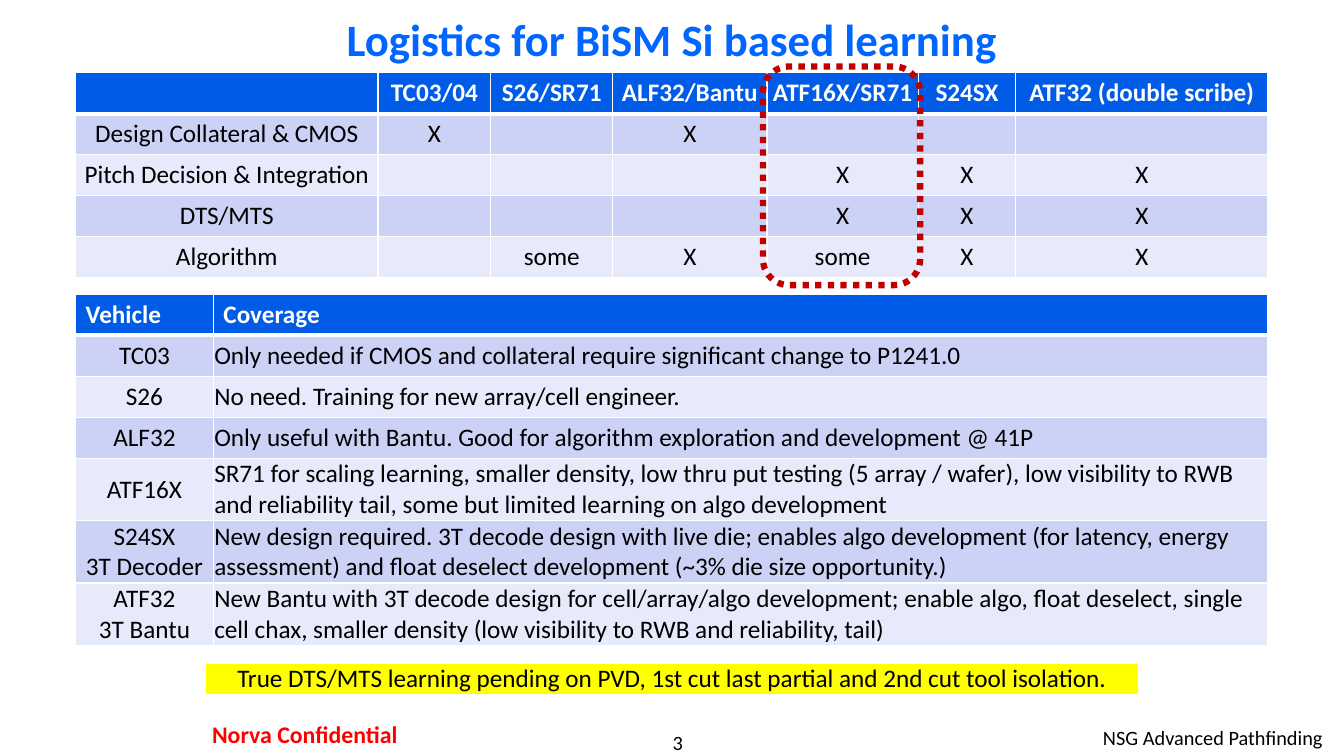
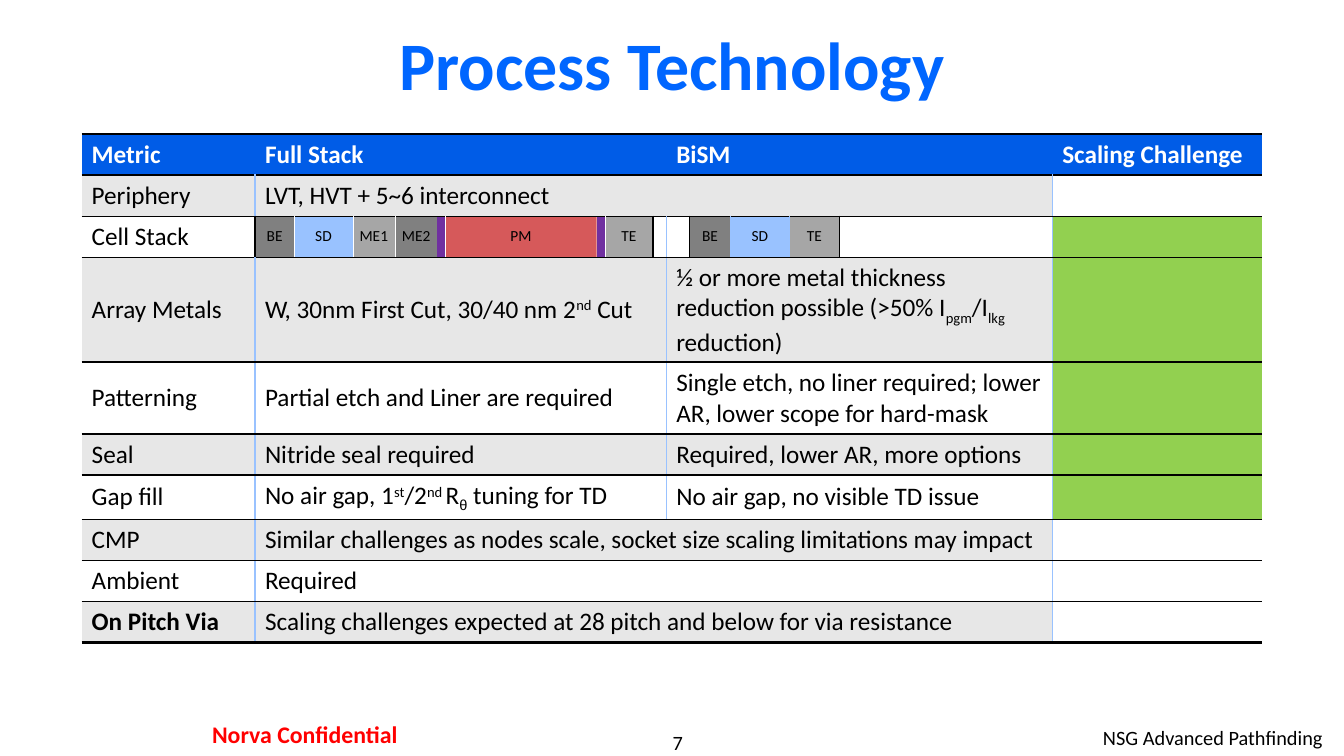
"""Builds two slides on vehicle logistics and process technology."""
from dataclasses import dataclass
from typing import Any

from lxml import etree
from pptx import Presentation
from pptx.dml.color import RGBColor
from pptx.enum.dml import MSO_LINE
from pptx.enum.shapes import MSO_SHAPE
from pptx.enum.text import MSO_ANCHOR, PP_ALIGN
from pptx.oxml.ns import qn
from pptx.util import Pt

LEFT, CENTER, RIGHT = PP_ALIGN.LEFT, PP_ALIGN.CENTER, PP_ALIGN.RIGHT
TOP, MIDDLE = MSO_ANCHOR.TOP, MSO_ANCHOR.MIDDLE
ROUNDED = MSO_SHAPE.ROUNDED_RECTANGLE
DOTTED = MSO_LINE.ROUND_DOT

BLACK, WHITE, RED = "000000", "FFFFFF", "FF0000"
TITLE_BLUE, HEADER_BLUE, PALE_BLUE = "0066FF", "005CE7", "99C2FF"
BANDS = ("CCD2F6", "E7EAFA")
LIGHT_GRAY, MID_GRAY, DARK_GRAY = "E7E7E7", "A6A6A6", "808080"
GREEN, PURPLE, BRICK = "92D050", "7030A0", "C10002"
YELLOW, DARK_RED = "FFFF00", "C00000"

ROW = 29.3
TWO_LINES = 44.6
WIDE = (7.2, 3.6)
TIGHT = (0.7, 0.35)
NONE = (0, 0)


def rgb(value):
    """Turn a hex string into a colour."""
    return RGBColor.from_string(value)


@dataclass
class Entry:
    """One table cell: its paragraphs of runs and its look."""
    text: Any = ""
    fill: Any = None
    span: int = 1
    align: Any = LEFT
    color: str = BLACK
    bold: bool = False
    size: float = 18
    margins: tuple = WIDE
    opacity: int = 100


class Deck:
    """Holds the style, the presentation and the current slide."""

    font = "Calibri"

    def __init__(self):
        """Start an empty widescreen presentation."""
        self.show = Presentation()
        self.show.slide_width, self.show.slide_height = Pt(960), Pt(540)
        self.slide = None

    def add_slide(self, title, title_size, title_height, number):
        """Add a slide with its title and the shared footer."""
        self.slide = self.show.slides.add_slide(self.show.slide_layouts[6])
        self.text(number, (400.3, 521.3, 167.8, 17.3), 14.5, margins=NONE)
        self.text("NSG Advanced Pathfinding", (635.8, 514.8, 316, 25.2), 14.5, align=RIGHT)
        self.text("Norva Confidential", (111.6, 509.8, 212.4, 29.5), 17, RED, True,
                  margins=(8.6, 4.3))
        self.text(title, (72, 12.2, 816, title_height), title_size, TITLE_BLUE, True,
                  anchor=MIDDLE)

    def set_margins(self, target, margins):
        """Set the side and end margins of a frame or cell."""
        target.margin_left = target.margin_right = Pt(margins[0])
        target.margin_top = target.margin_bottom = Pt(margins[1])

    def add_text_run(self, paragraph, text, size, color, bold, baseline=0, font=None):
        """Add one run of text, raised or lowered by a percentage."""
        run = paragraph.add_run()
        run.text = text
        run.font.name, run.font.size, run.font.bold = font or self.font, Pt(size), bold
        run.font.color.rgb = rgb(color)
        if baseline:
            run._r.get_or_add_rPr().set("baseline", str(baseline * 1000))

    def text(self, text, box, size, color=BLACK, bold=False, align=CENTER,
             anchor=TOP, margins=WIDE):
        """Add a text box with one line."""
        frame = self.slide.shapes.add_textbox(*map(Pt, box)).text_frame
        frame.word_wrap = True
        frame.vertical_anchor = anchor
        self.set_margins(frame, margins)
        frame.paragraphs[0].alignment = align
        self.add_text_run(frame.paragraphs[0], text, size, color, bold)

    def border(self, cell, side, line):
        """Draw one cell edge, or clear it when there is no line."""
        color, width = line or (None, 0)
        edge = etree.SubElement(cell._tc.get_or_add_tcPr(), qn(f"a:ln{side}"),
                                w=str(int(Pt(width))))
        if color:
            solid = etree.SubElement(edge, qn("a:solidFill"))
            etree.SubElement(solid, qn("a:srgbClr"), val=color)
        else:
            etree.SubElement(edge, qn("a:noFill"))

    def paint(self, cell, entry):
        """Fill a cell with its colour and opacity."""
        if entry.fill is None:
            cell.fill.background()
            return
        cell.fill.solid()
        cell.fill.fore_color.rgb = rgb(entry.fill)
        if entry.opacity < 100:
            color = cell._tc.tcPr.find(qn("a:solidFill")).find(qn("a:srgbClr"))
            etree.SubElement(color, qn("a:alpha"), val=str(entry.opacity * 1000))

    def cell_text(self, cell, entry):
        """Put the paragraphs of an entry into a cell."""
        cell.vertical_anchor = MIDDLE
        self.set_margins(cell, entry.margins)
        paragraphs = [entry.text] if isinstance(entry.text, str) else entry.text
        for index, runs in enumerate(paragraphs):
            frame = cell.text_frame
            paragraph = frame.add_paragraph() if index else frame.paragraphs[0]
            paragraph.alignment = entry.align
            for text, *shift in [(runs,)] if isinstance(runs, str) else runs:
                if text:
                    self.add_text_run(paragraph, text, entry.size, entry.color, entry.bold,
                                      *shift)

    def table(self, left, top, widths, heights, rows, row_lines, column_lines):
        """Add a table; lines are listed by row edge and, per row, by column edge."""
        frame = self.slide.shapes.add_table(len(heights), len(widths), Pt(left), Pt(top),
                                            Pt(sum(widths)), Pt(sum(heights)))
        table = frame.table
        table.first_row = table.horz_banding = False
        for column, width in zip(table.columns, widths):
            column.width = Pt(width)
        for r, (height, entries) in enumerate(zip(heights, rows)):
            table.rows[r].height = Pt(height)
            start = 0
            for entry in entries:
                end = start + entry.span
                for c in range(start, end):
                    cell = table.cell(r, c)
                    first, last = c == start, c in (start, end - 1)
                    self.border(cell, "L", column_lines[r][start] if first else None)
                    self.border(cell, "R", column_lines[r][end] if last else None)
                    self.border(cell, "T", row_lines[r])
                    self.border(cell, "B", row_lines[r + 1])
                    self.paint(cell, entry)
                if entry.span > 1:
                    table.cell(r, start).merge(table.cell(r, end - 1))
                self.cell_text(table.cell(r, start), entry)
                start = end

    def banded_table(self, left, top, widths, heights, rows):
        """Add a table whose edges are white, thicker below the header."""
        thin = (WHITE, 1)
        row_lines = [thin, (WHITE, 3)] + [thin] * (len(heights) - 1)
        column_lines = [[thin] * (len(widths) + 1)] * len(heights)
        self.table(left, top, widths, heights, rows, row_lines, column_lines)

    def highlight(self, box):
        """Add a dotted rounded outline."""
        outline = self.slide.shapes.add_shape(ROUNDED, *map(Pt, box))
        outline.shadow.inherit = False
        outline.fill.background()
        outline.line.color.rgb = rgb(DARK_RED)
        outline.line.width = Pt(4.5)
        outline.line.dash_style = DOTTED


def header(text, span=1, **look):
    """Return a header entry."""
    return Entry(text, HEADER_BLUE, span, color=WHITE, bold=True, **look)


def logistics(deck):
    """Build the slide on vehicles and their coverage."""
    deck.add_slide("Logistics for BiSM Si based learning", 32, 30.2, "3")
    vehicles = ["", "TC03/04", "S26/SR71", "ALF32/Bantu", "ATF16X/SR71", "S24SX",
                "ATF32 (double scribe)"]
    topics = [
        ["Design Collateral & CMOS", "X", "", "X", "", "", ""],
        ["Pitch Decision & Integration", "", "", "", "X", "X", "X"],
        ["DTS/MTS", "", "", "", "X", "X", "X"],
        ["Algorithm", "", "some", "X", "some", "X", "X"],
    ]
    rows = [[header(name, align=CENTER, margins=NONE) for name in vehicles]]
    for index, topic in enumerate(topics):
        rows.append([Entry(mark, BANDS[index % 2], align=CENTER, margins=NONE)
                     for mark in topic])
    deck.banded_table(54, 52, [216, 80.6, 87.1, 110.2, 108, 69.8, 180], [ROW] * 5, rows)

    coverage = [
        ("TC03", "Only needed if CMOS and collateral require significant change to P1241.0"),
        ("S26", "No need. Training for new array/cell engineer."),
        ("ALF32", "Only useful with Bantu. Good for algorithm exploration and "
                  "development @ 41P"),
        ("ATF16X", "SR71 for scaling learning, smaller density, low thru put testing "
                   "(5 array / wafer), low visibility to RWB and reliability tail, some but "
                   "limited learning on algo development"),
        (["S24SX", "3T Decoder"],
         "New design required. 3T decode design with live die; enables algo development "
         "(for latency, energy assessment) and float deselect development "
         "(~3% die size opportunity.)"),
        (["ATF32", "3T Bantu"],
         "New Bantu with 3T decode design for cell/array/algo development; enable algo, "
         "float deselect, single cell chax, smaller density (low visibility to RWB and "
         "reliability, tail)"),
    ]
    rows = [[header("Vehicle"), header("Coverage")]]
    for index, (vehicle, note) in enumerate(coverage):
        band = BANDS[index % 2]
        rows.append([Entry(vehicle, band, align=CENTER, margins=TIGHT),
                     Entry(note, band, margins=TIGHT)])
    deck.banded_table(54, 210.2, [98.4, 753.3], [ROW] * 4 + [TWO_LINES] * 3, rows)

    caveat = Entry("True DTS/MTS learning pending on PVD, 1st cut last partial and 2nd cut "
                   "tool isolation.", YELLOW, align=CENTER, margins=TIGHT)
    deck.table(147, 473.8, [666], [22.6], [[caveat]], [(WHITE, 1)] * 2, [[(WHITE, 1)] * 2])
    deck.highlight((545, 47.5, 112.3, 156.2))


def technology(deck):
    """Build the slide comparing the two cell stacks."""
    deck.add_slide("Process Technology", 48.5, 66.2, "7")
    layers = [("BE", DARK_GRAY), ("SD", PALE_BLUE), ("ME1", MID_GRAY), ("ME2", DARK_GRAY),
              ("", PURPLE), ("PM", BRICK), ("", PURPLE), ("TE", MID_GRAY), ("", None),
              ("", WHITE), ("BE", DARK_GRAY), ("SD", PALE_BLUE), ("TE", MID_GRAY),
              ("", WHITE)]
    cell_stack = [Entry(name, fill, align=CENTER, size=11, margins=NONE,
                        opacity=65 if fill == BRICK else 100) for name, fill in layers]
    metals = [[("W, 30nm First Cut, 30/40 nm 2",), ("nd", 30), (" Cut",)]]
    thinner = [[("½ or more metal thickness reduction possible (>50% I",), ("pgm", -25),
                ("/I",), ("lkg", -25), (" reduction)",)]]
    gap = [[("No air gap, 1",), ("st", 30), ("/2",), ("nd ", 30), ("R",),
            ("θ", -25, "Arial"), (" tuning for TD",)]]
    metrics = [
        ("Periphery", ["LVT, HVT + 5~6 interconnect"]),
        ("Cell Stack", None),
        ("Array Metals", [metals, thinner]),
        ("Patterning", ["Partial etch and Liner are required",
                        "Single etch, no liner required; lower AR, lower scope for hard-mask"]),
        ("Seal", ["Nitride seal required", "Required, lower AR, more options"]),
        ("Gap fill", [gap, "No air gap, no visible TD issue"]),
        ("CMP", ["Similar challenges as nodes scale, socket size scaling limitations "
                 "may impact"]),
        ("Ambient", ["Required"]),
        ("On Pitch Via", ["Scaling challenges expected at 28 pitch and below for via "
                          "resistance"]),
    ]
    rows = [[header("Metric"), header("Full Stack", 9), header("BiSM", 5),
             header("Scaling Challenge")]]
    for index, (metric, notes) in enumerate(metrics):
        band = WHITE if index % 2 else LIGHT_GRAY
        shared = notes is not None and len(notes) == 1
        spans = [14] if shared else [9, 5]
        details = cell_stack if notes is None else [
            Entry(note, band, span) for note, span in zip(notes, spans)]
        rows.append([Entry(metric, band, bold=metric == "On Pitch Via"), *details,
                     Entry(fill=None if shared else GREEN)])

    thick, thin, blue, hair = (BLACK, 2), (BLACK, 1), (PALE_BLUE, 1), (WHITE, 0.25)
    row_lines = [thick] * 2 + [thin] * 8 + [thick]
    column_lines = [[None] * 17] + [[None] + [blue] * 15 + [None] for _ in metrics]
    column_lines[2] = [None, thin, hair, hair, hair, None, hair, None, hair, thin, blue,
                       thin, blue, blue, thin, blue, None]
    widths = [123.8, 28.1, 41.8, 30.2, 30.2, 5.8, 108, 5.8, 34.6, 9.4, 16.6, 29.5, 41.8,
              36, 151.9, 149.8]
    heights = [ROW] * 3 + [75, 51.4, ROW, 30.7] + [ROW] * 3
    deck.table(58.3, 95.8, widths, heights, rows, row_lines, column_lines)


def main():
    """Build and save the presentation."""
    deck = Deck()
    logistics(deck)
    technology(deck)
    deck.show.save("out.pptx")


if __name__ == "__main__":
    main()
